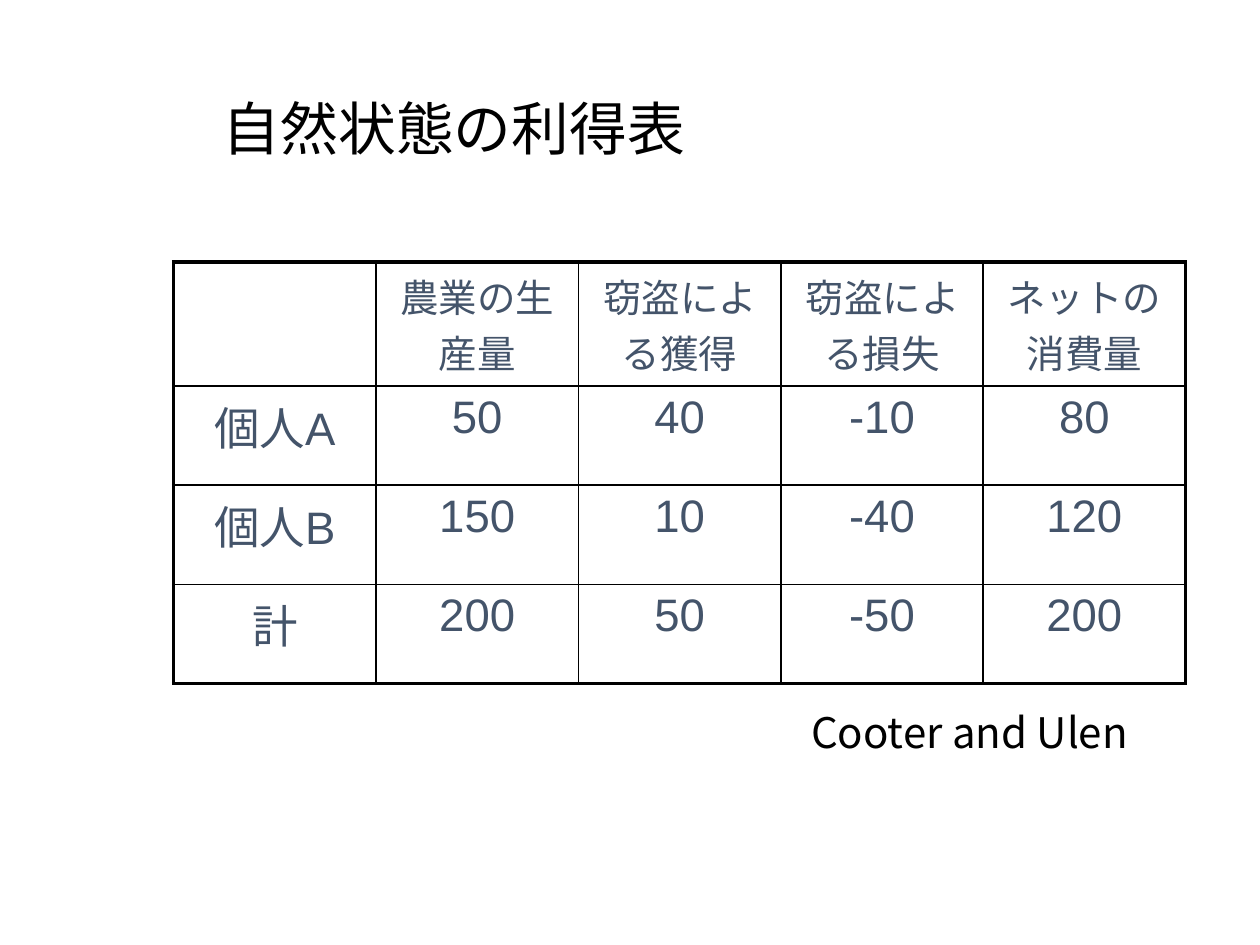
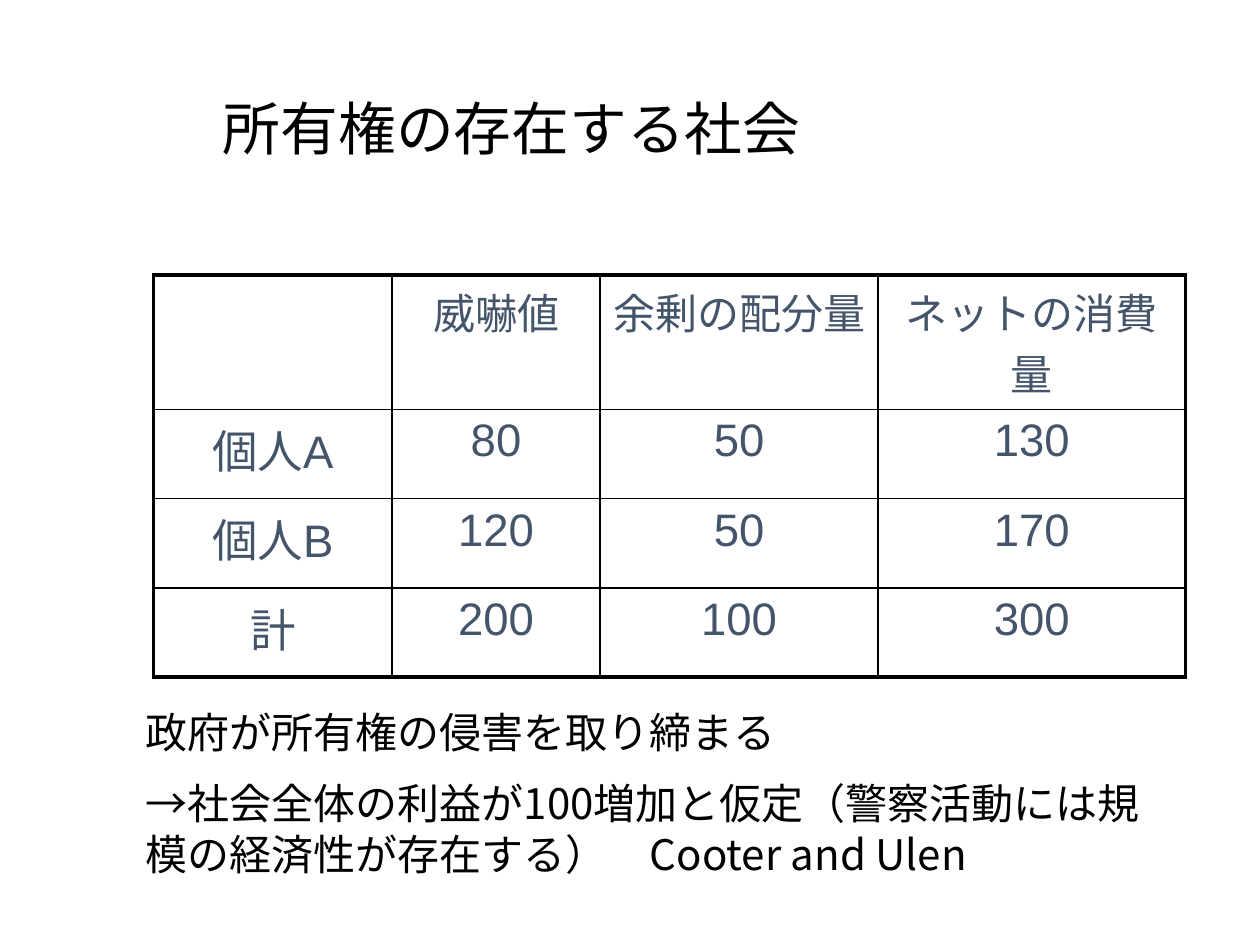
from lxml import etree
from pptx import Presentation
from pptx.dml.color import RGBColor
from pptx.enum import lang, text
from pptx.oxml import ns
from pptx.util import Cm, Pt

COLOURS = {"ink": "000000", "table": "44546A"}
CJK_FONT = "Noto Sans CJK JP"
TITLE = {"name": CJK_FONT, "size": Pt(33), "colour": "ink"}
NOTE = {"name": CJK_FONT, "size": Pt(24), "colour": "ink"}
CELL = {"name": "Arial", "size": Pt(26), "colour": "table"}
OUTER_LINE, INNER_LINE = Pt(2.25), Pt(1)
TITLE_ONLY = 5


def write(para, words, style):
    span = para.add_run()
    span.text = words
    for name, value in style.items():
        if name == "colour":
            span.font.color.rgb = RGBColor.from_string(COLOURS[value])
        else:
            setattr(span.font, name, value)
    span.font.language_id = lang.MSO_LANGUAGE_ID.JAPANESE
    east_asian = etree.Element(ns.qn("a:ea"), typeface=CJK_FONT)
    span.font._element.find(ns.qn("a:latin")).addnext(east_asian)


def add_page(deck, heading):
    page = deck.slides.add_slide(deck.slide_layouts[TITLE_ONLY])
    title = page.shapes.title
    place = {"left": Cm(4.24), "top": Cm(0.53), "width": Cm(19.48), "height": Cm(4.24)}
    for name, value in place.items():
        setattr(title, name, value)
    title.text_frame.vertical_anchor = text.MSO_ANCHOR.MIDDLE
    para = title.text_frame.paragraphs[0]
    para.alignment = text.PP_ALIGN.LEFT
    para.line_spacing = 0.9
    write(para, heading, TITLE)
    return page


def draw_borders(cell, widths):
    """Draw the cell's edges; widths maps L, R, T and B to line widths."""
    properties = cell._tc.get_or_add_tcPr()
    for side, width in widths.items():
        line = etree.SubElement(properties, ns.qn(f"a:ln{side}"), w=str(int(width)))
        fill = etree.SubElement(line, ns.qn("a:solidFill"))
        etree.SubElement(fill, ns.qn("a:srgbClr"), val=COLOURS["ink"])


def add_payoff_table(page, left, top, widths, heights, header_size, rows):
    """Add a table with a heavy outline and thin inner lines."""
    table = page.shapes.add_table(
        len(rows), len(widths), left, top, sum(widths), sum(heights)).table
    table.first_row = table.horz_banding = False
    for column, width in zip(table.columns, widths):
        column.width = width
    for row, height in zip(table.rows, heights):
        row.height = height

    last_row, last_column = len(rows) - 1, len(widths) - 1
    for i, values in enumerate(rows):
        for j, value in enumerate(values):
            cell = table.cell(i, j)
            on_outline = {"L": j == 0, "R": j == last_column,
                          "T": i == 0, "B": i == last_row}
            draw_borders(cell, {side: OUTER_LINE if outer else INNER_LINE
                                for side, outer in on_outline.items()})
            cell.fill.background()
            if value:
                para = cell.text_frame.paragraphs[0]
                para.alignment = text.PP_ALIGN.CENTER
                write(para, value, CELL | ({"size": header_size} if i == 0 else {}))


def add_note(page, left, width, height, lines):
    frame = page.shapes.add_textbox(left, Cm(14.12), width, height).text_frame
    frame.word_wrap = True
    frame.auto_size = text.MSO_AUTO_SIZE.SHAPE_TO_FIT_TEXT
    for i, line in enumerate(lines):
        para = frame.add_paragraph() if i else frame.paragraphs[0]
        if i:
            para.space_before = Pt(12)
        write(para, line, NOTE)


def main():
    deck = Presentation()
    deck.slide_width, deck.slide_height = Cm(25.4), Cm(19.05)

    nature = add_page(deck, "自然状態の利得表")
    add_payoff_table(
        nature, Cm(3.5), Cm(5.28), [Cm(4.08)] * 5, [Cm(2)] * 4, Pt(22),
        [["", "農業の生産量", "窃盗による獲得", "窃盗による損失", "ネットの消費量"],
         ["個人A", "50", "40", "-10", "80"],
         ["個人B", "150", "10", "-40", "120"],
         ["計", "200", "50", "-50", "200"]])
    add_note(nature, Cm(16.1), Cm(7.4), Cm(1.27), ["Cooter and Ulen"])

    property_rights = add_page(deck, "所有権の存在する社会")
    add_payoff_table(
        property_rights, Cm(3.1), Cm(5.54),
        [Cm(4.8), Cm(4.2), Cm(5.6), Cm(6.2)], [Cm(2)] + [Cm(1.8)] * 3, Pt(24),
        [["", "威嚇値", "余剰の配分量", "ネットの消費量"],
         ["個人A", "80", "50", "130"],
         ["個人B", "120", "50", "170"],
         ["計", "200", "100", "300"]])
    add_note(
        property_rights, Cm(2.69), Cm(20.8), Cm(3.84),
        ["政府が所有権の侵害を取り締まる",
         "→社会全体の利益が100増加と仮定（警察活動には規模の経済性が存在する）　Cooter and Ulen"])

    deck.save("out.pptx")


if __name__ == "__main__":
    main()
